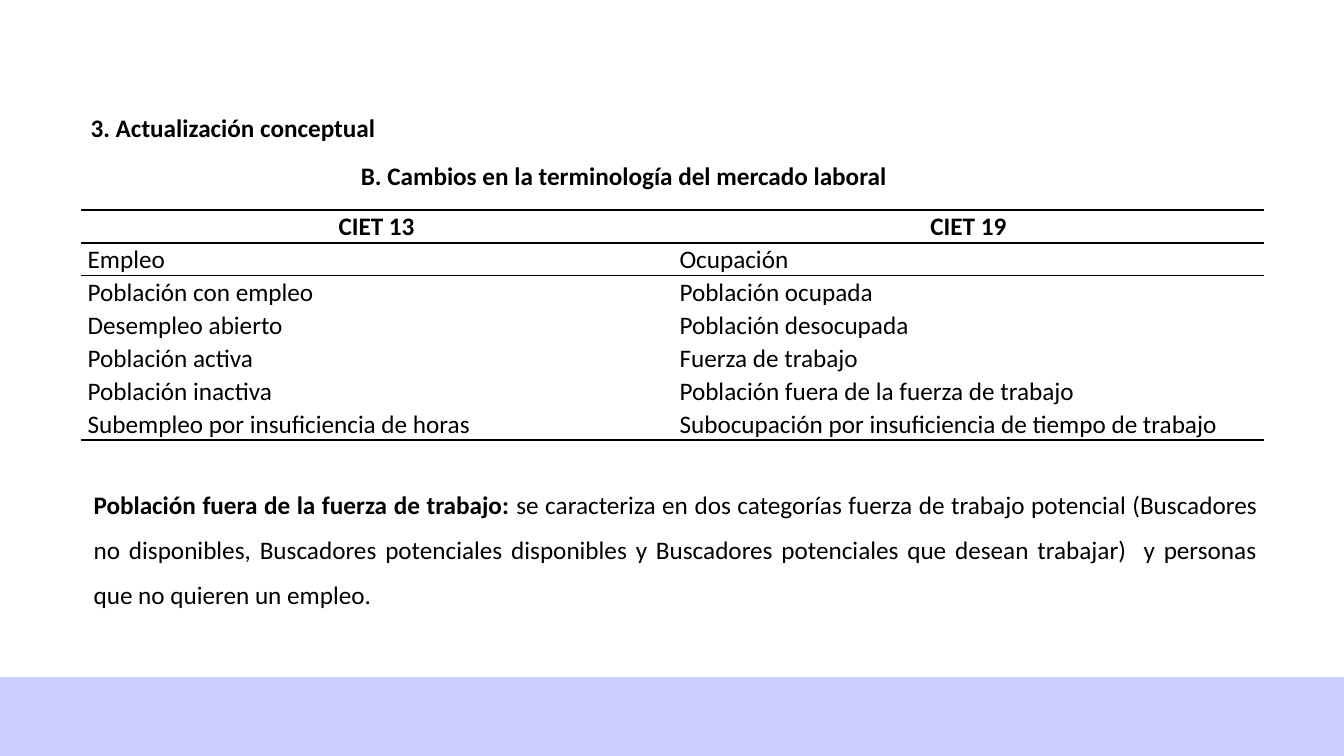
from lxml import etree
from pptx import Presentation
from pptx.dml.color import RGBColor
from pptx.enum.shapes import MSO_SHAPE as Preset
from pptx.enum.text import MSO_ANCHOR as Anchor, MSO_AUTO_SIZE as AutoSize, PP_ALIGN as Align
from pptx.oxml import parse_xml
from pptx.oxml.ns import nsdecls, qn
from pptx.util import Pt

PX = 9144  # 100 px to the inch
BLACK, LILAC = "000000", "CCCCFF"
NO_GRID_STYLE = "{2D5ABB26-0587-4C30-8999-92F81FD0307C}"


def color(hex_value):
    return RGBColor.from_string(hex_value)


def write(paragraph, runs, **paragraph_format):
    """Fill a paragraph with (text, bold) runs in the slide's body type."""
    for key, value in paragraph_format.items():
        setattr(paragraph, key, value)
    for text, bold in runs:
        run = paragraph.add_run()
        run.text = text
        for key, value in dict(name="Calibri", size=Pt(18), bold=bold).items():
            setattr(run.font, key, value)
        run.font.color.rgb = color(BLACK)


deck = Presentation()
deck.slide_width, deck.slide_height = 1333 * PX, 750 * PX
slide = deck.slides.add_slide(deck.slide_layouts[6])

footer_band = slide.shapes.add_shape(Preset.RECTANGLE, 0, 672 * PX, 1333 * PX, 78 * PX)
footer_band.shadow.inherit = False
footer_band.fill.solid()
footer_band.fill.fore_color.rgb = color(LILAC)
footer_band.line.color.rgb = color(LILAC)
footer_band.line.width = Pt(1)

# Terminology table
terms = [
    ("CIET 13", "CIET 19"),
    ("Empleo", "Ocupación"),
    ("Población con empleo", "Población ocupada"),
    ("Desempleo abierto", "Población desocupada"),
    ("Población activa", "Fuerza de trabajo"),
    ("Población inactiva", "Población fuera de la fuerza de trabajo"),
    ("Subempleo por insuficiencia de horas",
     "Subocupación por insuficiencia de tiempo de trabajo"),
]
last = len(terms) - 1
ruled_sides = {0: ("lnT", "lnB"), 1: ("lnT",), last: ("lnB",)}
cell_format = dict(margin_left=7 * PX, margin_right=7 * PX, margin_top=0,
                   margin_bottom=0, vertical_anchor=Anchor.MIDDLE)

terminology = slide.shapes.add_table(
    len(terms), 2, 80 * PX, 208 * PX, 1174 * PX, 30 * len(terms) * PX).table
terminology.first_row = terminology.horz_banding = False
terminology._tbl.tblPr.find(qn("a:tableStyleId")).text = NO_GRID_STYLE

for row, pair in enumerate(terms):
    for column, term in enumerate(pair):
        cell = terminology.cell(row, column)
        for key, value in cell_format.items():
            setattr(cell, key, value)
        cell.fill.background()
        is_header = row == 0
        write(cell.text_frame.paragraphs[0], [(term, is_header)],
              alignment=Align.CENTER if is_header else Align.LEFT,
              line_spacing=1.07, space_after=Pt(8))
        for place, side in enumerate(ruled_sides.get(row, ())):
            rule = parse_xml(f'<a:{side} {nsdecls("a")} w="{Pt(1.5)}"/>')
            rule_fill = etree.SubElement(rule, qn("a:solidFill"))
            etree.SubElement(rule_fill, qn("a:srgbClr"), val=BLACK)
            cell._tc.tcPr.insert(place, rule)

# Headings and closing definition
texts = [
    ((80, 104, 667, 40), [("3. Actualización conceptual", True)],
     dict(alignment=Align.JUSTIFY, line_spacing=1.07, space_after=Pt(8))),
    ((348, 154, 667, 40), [("B. Cambios en la terminología del mercado laboral", True)], {}),
    ((83, 465, 1174, 141),
     [("Población fuera de la fuerza de trabajo: ", True),
      ("se caracteriza en dos categorías fuerza de trabajo potencial (Buscadores no "
       "disponibles, Buscadores potenciales disponibles y Buscadores potenciales que "
       "desean trabajar)  y personas que no quieren un empleo.", False)],
     dict(alignment=Align.JUSTIFY, line_spacing=1.5)),
]
for bounds, runs, paragraph_format in texts:
    frame = slide.shapes.add_textbox(*(length * PX for length in bounds)).text_frame
    frame.word_wrap = True
    frame.auto_size = AutoSize.SHAPE_TO_FIT_TEXT
    write(frame.paragraphs[0], runs, **paragraph_format)

deck.save("out.pptx")
